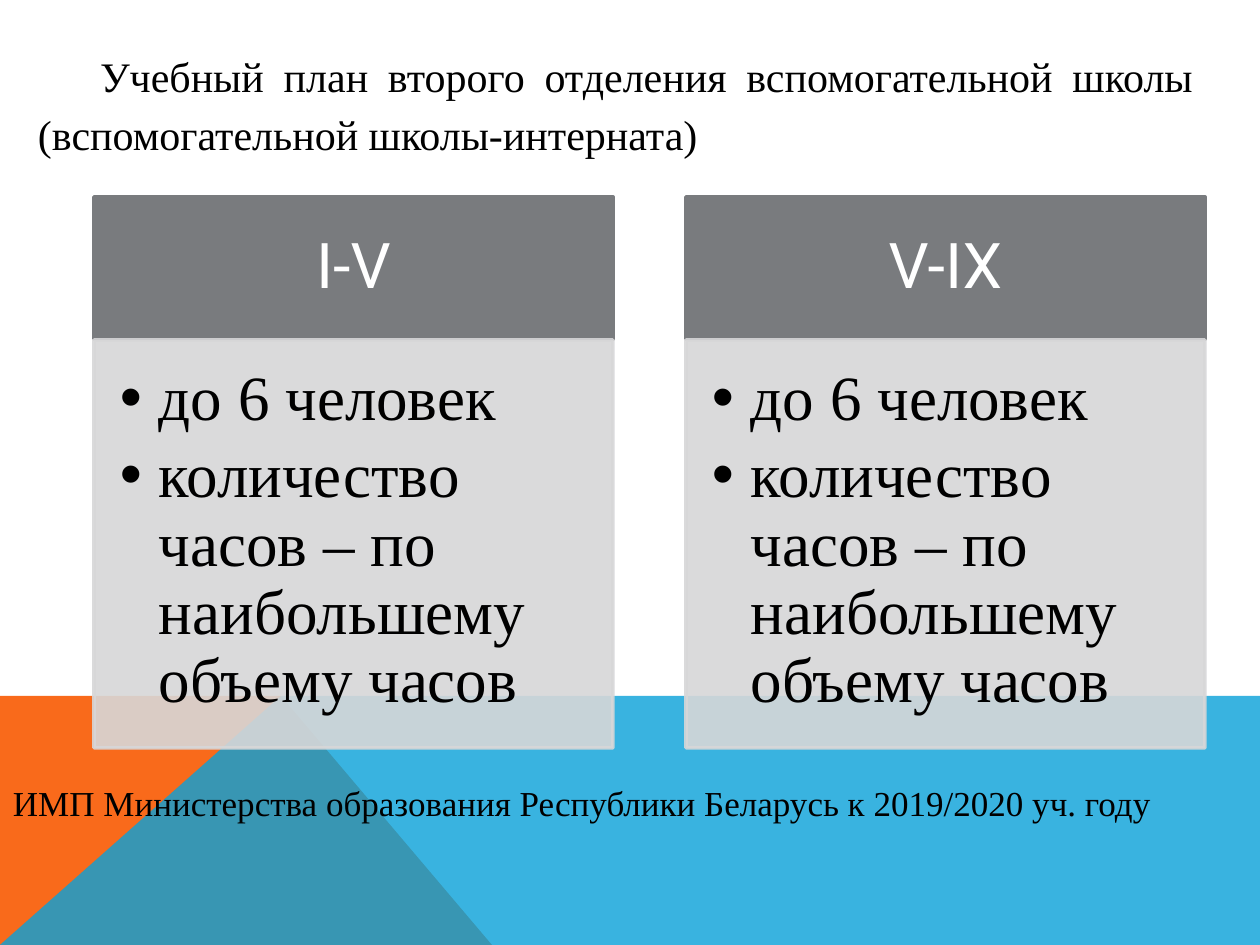
import pptx
import pptx.dml.color
import pptx.enum.text
import pptx.oxml
import pptx.oxml.ns
import pptx.util

SCALE = 914400 / 126
ALIGN = pptx.enum.text.PP_ALIGN
ANCHOR = pptx.enum.text.MSO_ANCHOR
SERIF = "Times New Roman"
COMPARISON_LAYOUT = 4


def px(length):
    return pptx.util.Emu(round(length * SCALE))


def paint(color_format, color, alpha=100):
    color_format.rgb = pptx.dml.color.RGBColor.from_string(color)
    if alpha < 100:
        namespace = pptx.oxml.ns.nsdecls("a")
        opacity = pptx.oxml.parse_xml(f'<a:alpha {namespace} val="{alpha * 1000}"/>')
        color_format._color._srgbClr.append(opacity)


def fill_shape(shape, color, alpha=100):
    shape.fill.solid()
    paint(shape.fill.fore_color, color, alpha)


def outline(shape, color, alpha=100):
    shape.line.fill.solid()
    paint(shape.line.color, color, alpha)
    shape.line.width = pptx.util.Pt(2)


def place(shape, left, top, width, height):
    shape.left, shape.top = px(left), px(top)
    shape.width, shape.height = px(width), px(height)


def write(shape, *lines, size, font=SERIF, color="000000", align=ALIGN.LEFT,
          anchor=ANCHOR.TOP, insets=(13, 6, 13, 6), spacing=1.0, after=0,
          margin=0, indent=0, bullet=None):
    frame = shape.text_frame
    frame.word_wrap = True
    frame.auto_size = pptx.enum.text.MSO_AUTO_SIZE.NONE
    frame.vertical_anchor = anchor
    frame.margin_left, frame.margin_top, frame.margin_right, frame.margin_bottom = map(px, insets)
    frame.text = "\n".join(lines)
    for para in frame.paragraphs:
        properties = para._p.get_or_add_pPr()
        properties.set("marL", str(px(margin)))
        properties.set("indent", str(px(indent)))
        if bullet:
            namespace = pptx.oxml.ns.nsdecls("a")
            properties.append(pptx.oxml.parse_xml(f'<a:buChar {namespace} char="{bullet}"/>'))
        para.alignment = align
        para.line_spacing = spacing
        para.space_before = pptx.util.Pt(0)
        para.space_after = pptx.util.Pt(after)
        para.font.size = pptx.util.Pt(size)
        para.font.name = font
        para.font.bold = False
        paint(para.font.color, color)


def add_backdrop(page, depth, points, color, alpha=100):
    builder = page.shapes.build_freeform(*points[0], scale=SCALE)
    builder.add_line_segments(points[1:], close=True)
    shape = builder.convert_to_shape()
    shape.shadow.inherit = False
    fill_shape(shape, color, alpha)
    shape.line.fill.background()
    page.shapes.element.insert(2 + depth, shape.element)


def fill_card(header, body, left, heading, items):
    place(header, left, 197, 519, 142)
    fill_shape(header, "797B7E")
    outline(header, "797B7E")
    write(header, heading, size=36, font="Roboto", color="FFFFFF", align=ALIGN.CENTER,
          anchor=ANCHOR.MIDDLE, insets=(35, 20, 35, 20), spacing=0.9)
    place(body, left, 340, 519, 408)
    fill_shape(body, "D7D7D8", 90)
    outline(body, "D7D7D8", 90)
    write(body, *items, size=36, insets=(26, 26, 35, 40), spacing=0.9, after=5.4,
          margin=39, indent=-39, bullet="•")


def main():
    deck = pptx.Presentation()
    deck.slide_width, deck.slide_height = px(1260), px(945)
    page = deck.slides.add_slide(deck.slide_layouts[COMPARISON_LAYOUT])

    add_backdrop(page, 0, [(0, 945), (0, 696), (281, 696), (492, 945)], "F96A1B")
    add_backdrop(page, 1, [(0, 945), (281, 696), (1260, 696), (1260, 945)], "08A1D9", 80)

    title = page.shapes.title
    place(title, 25, 37, 1181, 130)
    write(title, "Учебный план второго отделения вспомогательной школы "
          "(вспомогательной школы-интерната)",
          size=24, align=ALIGN.JUSTIFY, spacing=1.15, indent=62)

    slots = list(page.placeholders)[1:]
    items = ["до 6 человек", "количество часов – по наибольшему объему часов"]
    for column, heading in enumerate(["I-V", "V-IX"]):
        header, body = slots[2 * column:2 * column + 2]
        fill_card(header, body, 94 + 592 * column, heading, items)

    source = page.shapes.add_textbox(px(0), px(775), px(1260), px(55))
    write(source, "ИМП Министерства образования Республики Беларусь к 2019/2020 уч. году", size=20)

    deck.save("out.pptx")


if __name__ == "__main__":
    main()
